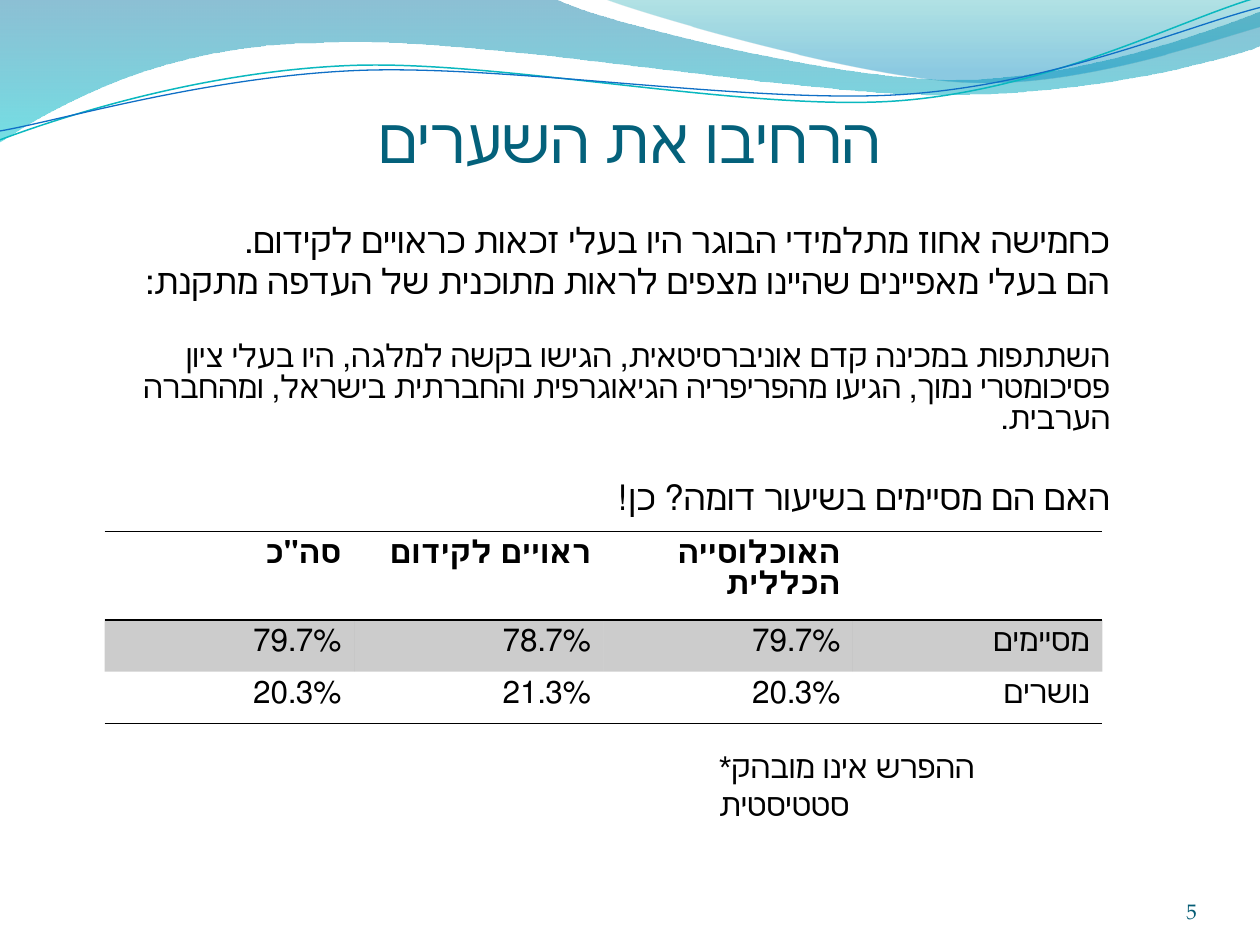
import math
import pptx
import pptx.util
import pptx.dml.color
import pptx.enum.text
import pptx.oxml
import pptx.oxml.ns

Inches, Pt = pptx.util.Inches, pptx.util.Pt
ALIGN, ANCHOR = pptx.enum.text.PP_ALIGN, pptx.enum.text.MSO_ANCHOR
qn = pptx.oxml.ns.qn
NS = pptx.oxml.ns.nsdecls("a")
PLAIN = "{2D5ABB26-0587-4C30-8999-92F81FD0307C}"  # no style, no grid

# Content
TITLE = "הרחיבו את השערים"
BODY = [  # text, size, space before, line spacing
    ("כחמישה אחוז מתלמידי הבוגר היו בעלי זכאות כראויים לקידום.", 20, 0, 0.8),
    ("הם בעלי מאפיינים שהיינו מצפים לראות מתוכנית של העדפה מתקנת:", 20, 4, 0.8),
    ("השתתפות במכינה קדם אוניברסיטאית, הגישו בקשה למלגה, היו בעלי ציון "
     "פסיכומטרי נמוך, הגיעו מהפריפריה הגיאוגרפית והחברתית בישראל, "
     "ומהחברה הערבית.", 18, 24, 0.82),
    ("האם הם מסיימים בשיעור דומה? כן!", 20, 27, 0.8),
]
ROWS = [
    ['סה"כ', "ראויים לקידום", "האוכלוסייה הכללית", ""],
    ["79.7%", "78.7%", "79.7%", "מסיימים"],
    ["20.3%", "21.3%", "20.3%", "נושרים"],
]
NOTE = "*ההפרש אינו מובהק סטטיסטית"
NUMBER = "5"

# Waves: a start, then straight points (2 numbers) or curves (6 numbers)
BANDS = [  # path, gradient stops (place, colour, opacity)
    ([(0, -0.01), (4.4, -0.01), (4.76, 0.17, 6.64, 0.63, 7.58, 0.63),
      (8.53, 0.63, 9.58, 0.26, 10, 0.09), (10.01, 0.36),
      (9.83, 0.44, 8.7, 0.76, 7.46, 0.75), (6.22, 0.75, 3.82, 0.28, 2.57, 0.34),
      (1.29, 0.35, 0.46, 0.83, -0.01, 1.13)],
     [(0, "0074A1", 45), (1, "00C6CF", 55)]),
    ([(4.79, -0.01), (5.09, 0.11, 6.82, 0.62, 7.69, 0.65),
      (8.56, 0.69, 9.61, 0.32, 10, 0.21), (10, 0)],
     [(0, "00A1A9", 30), (0.8, "008BBF", 45)]),
]
TILT = 2.7  # degrees the thin curves lean to the left
CURVES = [  # path, middle, colour, width
    ([(0, 1.11), (0.48, 0.93, 1.58, 0.57, 2.77, 0.52),
      (3.95, 0.47, 5.93, 0.89, 7.13, 0.8), (8.33, 0.71, 9.38, 0.15, 9.98, -0.02)],
     (4.99, 0.58), "0AB8BF", 0.85),
    ([(0, 1.04), (0.47, 0.96, 1.64, 0.61, 2.83, 0.56),
      (4.03, 0.51, 5.97, 0.83, 7.17, 0.75), (8.36, 0.67, 9.41, 0.21, 10, 0.06)],
     (5, 0.59), "0F6FC6", 0.75),
]


def paint(target, color):
    target.rgb = pptx.dml.color.RGBColor.from_string(color)


def fade(node, percent):
    for clr in node.iter(qn("a:srgbClr")):
        clr.append(pptx.oxml.parse_xml(f'<a:alpha {NS} val="{percent * 1000}"/>'))


def pairs(part):
    return list(zip(part[::2], part[1::2]))


def turn(part, middle):
    cos, sin = math.cos(math.radians(TILT)), math.sin(math.radians(TILT))
    mx, my = middle
    return tuple(n for x, y in pairs(part) for n in (
        mx + (x - mx) * cos - (y - my) * sin,
        my + (x - mx) * sin + (y - my) * cos))


def draw(path, close):
    points = [(Inches(x), Inches(y)) for part in path for x, y in pairs(part)]
    pen = slide.shapes.build_freeform(*points[0])
    pen.add_line_segments(points[1:], close=close)
    shape = pen.convert_to_shape()
    shape.shadow.inherit = False
    # Join each three points of a curve into one Bezier step
    lines = iter(list(shape._element.iter(qn("a:lnTo"))))
    for part in path[1:]:
        first = next(lines)
        if len(part) == 6:
            bend = pptx.oxml.parse_xml(f"<a:cubicBezTo {NS}/>")
            first.addprevious(bend)
            for step in (first, next(lines), next(lines)):
                bend.append(step[0])
                step.getparent().remove(step)
    return shape


def write(para, text, size, color="000000", face="Arial", align=ALIGN.RIGHT,
          rtl=True, bold=False):
    para.text = text
    para.alignment = align
    if rtl:
        para._p.get_or_add_pPr().set("rtl", "1")
    font = para.font
    font.name, font.size, font.bold = face, Pt(size), bold
    paint(font.color, color)


def box(x, y, w, h):
    frame = slide.shapes.add_textbox(*map(Inches, (x, y, w, h))).text_frame
    frame.word_wrap = True
    return frame


def rule(cell, sides):
    props = cell._tc.get_or_add_tcPr()
    for i, side in enumerate(sides):
        props.insert(i, pptx.oxml.parse_xml(
            f'<a:ln{side} {NS} w="12700"><a:solidFill><a:srgbClr val="000000"/>'
            f'</a:solidFill></a:ln{side}>'))


deck = pptx.Presentation()
deck.slide_width, deck.slide_height = Inches(10), Inches(7.5)
slide = deck.slides.add_slide(deck.slide_layouts[5])

# Waves along the top
for path, stops in BANDS:
    band = draw(path, True)
    band.line.fill.background()
    band.fill.gradient()
    band.fill.gradient_angle = 270
    for stop, (place, color, percent) in zip(band.fill.gradient_stops, stops):
        stop.position = place
        paint(stop.color, color)
        fade(stop._gs, percent)
for path, middle, color, width in CURVES:
    curve = draw([turn(part, middle) for part in path], False)
    curve.rotation = 360 - TILT
    curve.fill.background()
    paint(curve.line.color, color)
    curve.line.width = Pt(width)

# Title
title = slide.shapes.title
title.left, title.top, title.width, title.height = map(Inches, (0.5, 0.75, 9, 0.89))
title.text_frame.vertical_anchor = ANCHOR.TOP
write(title.text_frame.paragraphs[0], TITLE, 36, "04617B", "Calibri",
      ALIGN.CENTER, False)

# Body text
frame = box(1, 1.75, 7.91, 2.75)
for i, (text, size, before, space) in enumerate(BODY):
    para = frame.add_paragraph() if i else frame.paragraphs[0]
    write(para, text, size)
    para.space_before = Pt(before)
    para.line_spacing = space

# Table
holder = slide.shapes.add_table(
    len(ROWS), len(ROWS[0]), *map(Inches, (0.83, 4.22, 7.92, 1.51)))
table = holder.table
table._tbl.tblPr.find(qn("a:tableStyleId")).text = PLAIN
table.horz_banding = False
for r, row in enumerate(ROWS):
    table.rows[r].height = Inches(0.41)
    for c, text in enumerate(row):
        cell = table.cell(r, c)
        if text:
            write(cell.text_frame.paragraphs[0], text, 18, bold=r == 0)
        if r == 1:
            cell.fill.solid()
            paint(cell.fill.fore_color, "000000")
            fade(cell._tc.tcPr, 20)
        else:
            cell.fill.background()
            rule(cell, "TB" if r == 0 else "B")
holder.height = Inches(1.51)

# Note and slide number
write(box(5.61, 5.88, 3.29, 0.4).paragraphs[0], NOTE, 18, align=ALIGN.LEFT, rtl=False)
frame = box(7.17, 6.83, 2.33, 0.5)
frame.margin_left = frame.margin_right = frame.margin_top = frame.margin_bottom = 0
frame.vertical_anchor = ANCHOR.BOTTOM
write(frame.paragraphs[0], NUMBER, 12, "045C75", "TeX Gyre Pagella", rtl=False)

deck.save("out.pptx")
